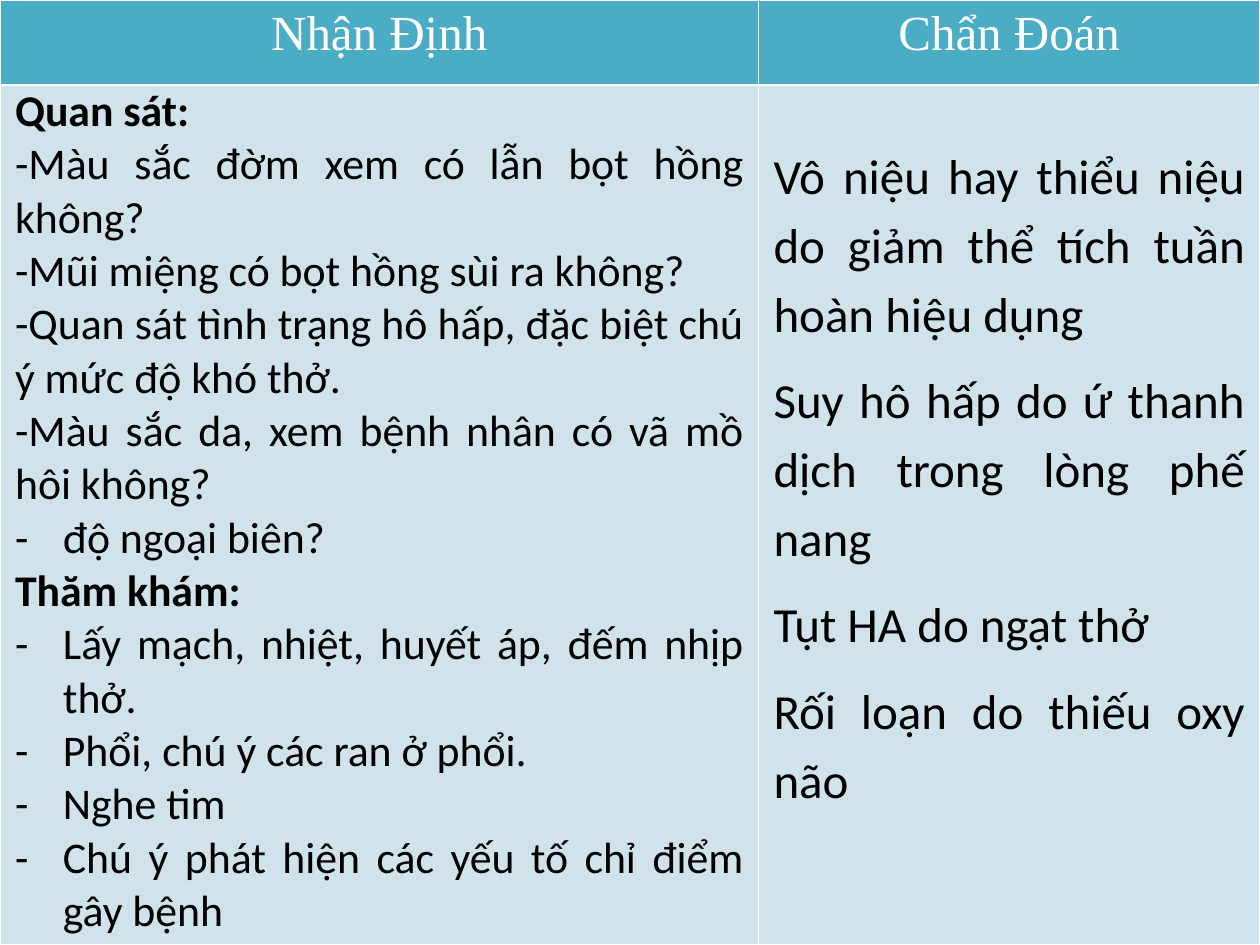
from dataclasses import dataclass

from lxml import etree
from pptx import Presentation
from pptx import util as u
from pptx.dml.color import RGBColor
from pptx.enum import text
from pptx.oxml import ns


@dataclass(frozen=True)
class Theme:
    header_fill: str = "4BACC6"
    body_fill: str = "D0E3EA"
    light: str = "FFFFFF"
    dark: str = "000000"
    header_font: str = "Times New Roman"
    body_font: str = "Calibri"
    large: float = 28
    medium: float = 25
    border: float = 1
    indent: float = 0.38


THEME = Theme()
WIDTH, HEIGHT = u.Inches(10), u.Inches(7.5)
COLUMN_SHARES = (0.602, 0.398)
ROW_SHARES = (0.09, 0.91)
HEADER_MARGINS = (0.1, 0.05, 0.1, 0.05)
ASSESSMENT_MARGINS = (0.12, 0, 0.12, 0)
DIAGNOSIS_MARGINS = (0.12, 0.43, 0.12, 0)

HEADINGS = ("Nhận Định", "Chẩn Đoán")
ASSESSMENT = (
    ("heading", "Quan sát:"),
    ("plain", "-Màu sắc đờm xem có lẫn bọt hồng không?"),
    ("plain", "-Mũi miệng có bọt hồng sùi ra không?"),
    ("plain", "-Quan sát tình trạng hô hấp, đặc biệt chú ý mức độ khó thở."),
    ("plain", "-Màu sắc da, xem bệnh nhân có vã mồ hôi không?"),
    ("bullet", "độ ngoại biên?"),
    ("heading", "Thăm khám:"),
    ("bullet", "Lấy mạch, nhiệt, huyết áp, đếm nhịp thở."),
    ("bullet", "Phổi, chú ý các ran ở phổi."),
    ("bullet", "Nghe tim"),
    ("bullet", "Chú ý phát hiện các yếu tố chỉ điểm gây bệnh"),
)
DIAGNOSES = (
    "Vô niệu hay thiểu niệu do giảm thể tích tuần hoàn hiệu dụng",
    "Suy hô hấp do ứ thanh dịch trong lòng phế nang",
    "Tụt HA do ngạt thở",
    "Rối loạn do thiếu oxy não",
)


def add_bullet(para):
    properties = para._p.get_or_add_pPr()
    indent = u.Inches(THEME.indent)
    properties.set("marL", str(indent))
    properties.set("indent", str(-indent))
    etree.SubElement(properties, ns.qn("a:buFont"), typeface=THEME.body_font)
    etree.SubElement(properties, ns.qn("a:buChar"), char="-")


def write(frame, words, size=THEME.medium, font=THEME.body_font, color=THEME.dark,
          align=text.PP_ALIGN.JUSTIFY, bold=False, bullet=False, spacing=None, after=None):
    para = frame.paragraphs[0]
    if para.runs:
        para = frame.add_paragraph()
    para.alignment = align
    if spacing:
        para.line_spacing = spacing
    if after:
        para.space_after = u.Pt(after)
    if bullet:
        add_bullet(para)
    span = para.add_run()
    span.text = words
    span.font.size = u.Pt(size)
    span.font.name = font
    span.font.bold = bold
    span.font.color.rgb = RGBColor.from_string(color)


def style_cell(cell, fill, margins):
    properties = cell._tc.get_or_add_tcPr()
    for side in ("lnL", "lnR", "lnT", "lnB"):
        line = etree.SubElement(properties, ns.qn(f"a:{side}"), w=str(u.Pt(THEME.border)))
        solid = etree.SubElement(line, ns.qn("a:solidFill"))
        etree.SubElement(solid, ns.qn("a:srgbClr"), val=THEME.light)
    cell.fill.solid()
    cell.fill.fore_color.rgb = RGBColor.from_string(fill)
    (cell.margin_left, cell.margin_top,
     cell.margin_right, cell.margin_bottom) = map(u.Inches, margins)
    return cell.text_frame


def add_grid(page):
    table = page.shapes.add_table(
        len(ROW_SHARES), len(COLUMN_SHARES), 0, 0, WIDTH, HEIGHT).table
    for column, share in zip(table.columns, COLUMN_SHARES):
        column.width = round(WIDTH * share)
    for row, share in zip(table.rows, ROW_SHARES):
        row.height = round(HEIGHT * share)
    return table


def fill_headings(table):
    for column, words in enumerate(HEADINGS):
        frame = style_cell(table.cell(0, column), THEME.header_fill, HEADER_MARGINS)
        write(frame, words, size=THEME.large, font=THEME.header_font,
              color=THEME.light, align=text.PP_ALIGN.CENTER)


def fill_assessment(table):
    frame = style_cell(table.cell(1, 0), THEME.body_fill, ASSESSMENT_MARGINS)
    for kind, words in ASSESSMENT:
        write(frame, words, bold=kind == "heading", bullet=kind == "bullet")


def fill_diagnoses(table):
    frame = style_cell(table.cell(1, 1), THEME.body_fill, DIAGNOSIS_MARGINS)
    for words in DIAGNOSES:
        write(frame, words, size=THEME.large, spacing=1.15, after=10)


def main():
    deck = Presentation()
    deck.slide_width, deck.slide_height = WIDTH, HEIGHT
    page = deck.slides.add_slide(deck.slide_layouts[6])
    table = add_grid(page)
    fill_headings(table)
    fill_assessment(table)
    fill_diagnoses(table)
    deck.save("out.pptx")


if __name__ == "__main__":
    main()
